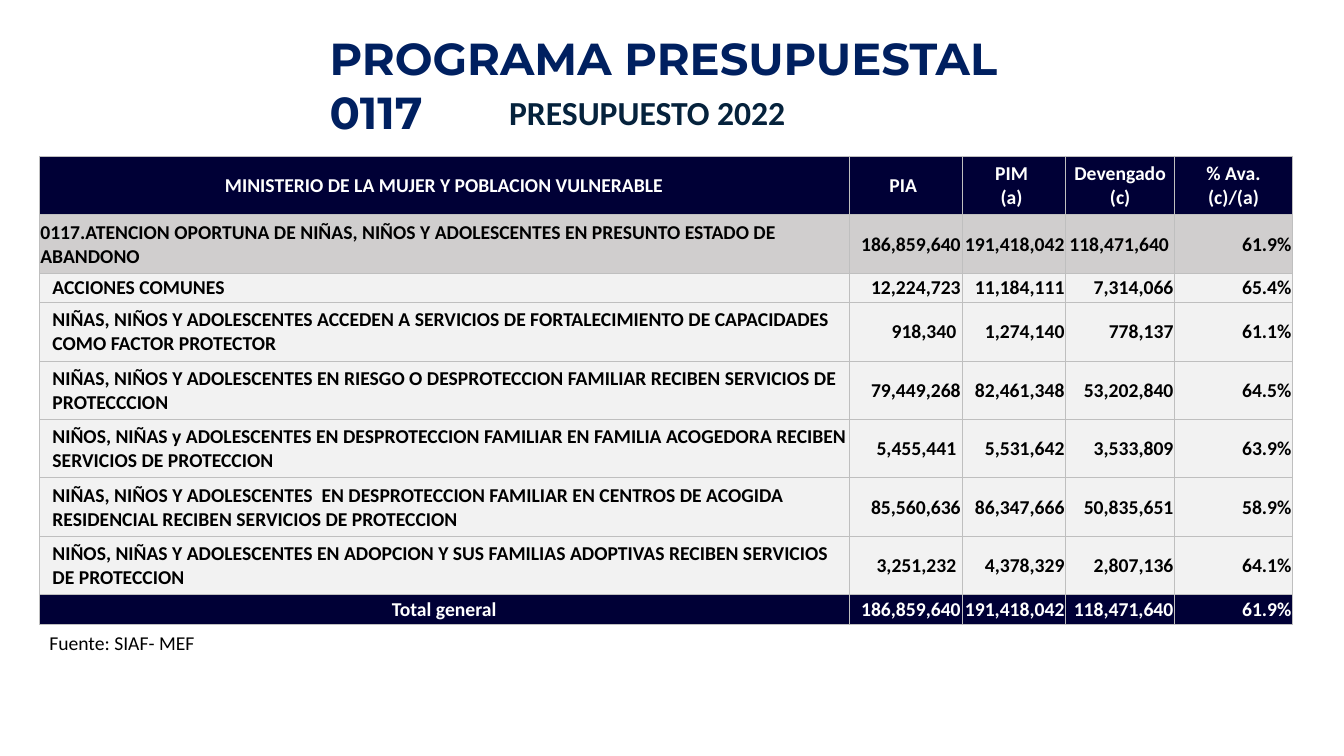
from lxml import etree
from pptx import Presentation
from pptx import util as u
from pptx.dml.color import RGBColor
from pptx.enum import text
from pptx.oxml.ns import qn

NAVY = "000036"
GREY = "D0CECE"
PALE = "F2F2F2"
WHITE = "FFFFFF"
BLACK = "000000"
LEFT, CENTER, RIGHT = text.PP_ALIGN.LEFT, text.PP_ALIGN.CENTER, text.PP_ALIGN.RIGHT

COLUMN_WIDTHS = [8.03, 1.12, 1.03, 1.08, 1.17]
ROW_HEIGHTS = [0.58, 0.58, 0.29] + [0.58] * 5 + [0.29]
BUDGET = [
    ["MINISTERIO DE LA MUJER Y POBLACION VULNERABLE", "PIA ", "PIM \n(a) ", "Devengado\n(c)", "% Ava.\n(c)/(a)"],
    ["0117.ATENCION OPORTUNA DE NIÑAS, NIÑOS Y ADOLESCENTES EN PRESUNTO ESTADO DE ABANDONO",
     "186,859,640", "191,418,042", "118,471,640 ", "61.9%"],
    ["ACCIONES COMUNES", "12,224,723", "11,184,111", "7,314,066", "65.4%"],
    ["NIÑAS, NIÑOS Y ADOLESCENTES ACCEDEN A SERVICIOS DE FORTALECIMIENTO DE CAPACIDADES COMO FACTOR PROTECTOR",
     "918,340 ", "1,274,140", "778,137", "61.1%"],
    ["NIÑAS, NIÑOS Y ADOLESCENTES EN RIESGO O DESPROTECCION FAMILIAR RECIBEN SERVICIOS DE PROTECCCION",
     "79,449,268", "82,461,348", "53,202,840", "64.5%"],
    ["NIÑOS, NIÑAS y ADOLESCENTES EN DESPROTECCION FAMILIAR EN FAMILIA ACOGEDORA RECIBEN SERVICIOS DE PROTECCION",
     "5,455,441 ", "5,531,642", "3,533,809", "63.9%"],
    ["NIÑAS, NIÑOS Y ADOLESCENTES  EN DESPROTECCION FAMILIAR EN CENTROS DE ACOGIDA RESIDENCIAL RECIBEN "
     "SERVICIOS DE PROTECCION", "85,560,636", "86,347,666", "50,835,651", "58.9%"],
    ["NIÑOS, NIÑAS Y ADOLESCENTES EN ADOPCION Y SUS FAMILIAS ADOPTIVAS RECIBEN SERVICIOS DE PROTECCION",
     "3,251,232 ", "4,378,329", "2,807,136", "64.1%"],
    ["Total general", "186,859,640", "191,418,042", "118,471,640", "61.9%"],
]


def color(value):
    return RGBColor.from_string(value)


class BudgetPage:
    font = "Calibri"
    body_size = 14
    border = "BFBFBF"

    def __init__(self, deck):
        self.page = deck.slides.add_slide(deck.slide_layouts[6])

    def add_words(self, para, words, ink, size=body_size, bold=True, font=font, align=LEFT):
        para.alignment = align
        for number, line in enumerate(words.split("\n")):
            if number:
                para.add_line_break()
            span = para.add_run()
            span.text = line
            span.font.name = font
            span.font.size = u.Pt(size)
            span.font.bold = bold
            span.font.color.rgb = color(ink)

    def label(self, area, words, ink, anchor=text.MSO_ANCHOR.TOP, spacing=1.0, **style):
        box = self.page.shapes.add_textbox(*map(u.Inches, area))
        box.text_frame.word_wrap = True
        box.text_frame.vertical_anchor = anchor
        para = box.text_frame.paragraphs[0]
        para.line_spacing = spacing
        self.add_words(para, words, ink, **style)

    def outline(self, cell):
        properties = cell._tc.get_or_add_tcPr()
        for position, side in enumerate(("a:lnL", "a:lnR", "a:lnT", "a:lnB")):
            line = etree.Element(qn(side), w=str(u.Pt(0.5)))
            fill = etree.SubElement(line, qn("a:solidFill"))
            etree.SubElement(fill, qn("a:srgbClr"), val=self.border)
            properties.insert(position, line)

    def fill_cell(self, cell, words, fill, ink, align, indent):
        cell.fill.solid()
        cell.fill.fore_color.rgb = color(fill)
        cell.vertical_anchor = text.MSO_ANCHOR.MIDDLE
        cell.margin_left = u.Inches(indent)
        cell.margin_top = cell.margin_right = u.Inches(0.01)
        cell.margin_bottom = 0
        self.add_words(cell.text_frame.paragraphs[0], words, ink, align=align)
        self.outline(cell)

    def table(self, left, top, rows):
        frame = self.page.shapes.add_table(
            len(rows), len(COLUMN_WIDTHS), u.Inches(left), u.Inches(top),
            u.Inches(sum(COLUMN_WIDTHS)), u.Inches(sum(ROW_HEIGHTS)))
        grid = frame.table
        grid.first_row = grid.horz_banding = False
        for column, width in zip(grid.columns, COLUMN_WIDTHS):
            column.width = u.Inches(width)
        last = len(rows) - 1
        for r, row in enumerate(rows):
            grid.rows[r].height = u.Inches(ROW_HEIGHTS[r])
            dark = r in (0, last)
            fill = NAVY if dark else GREY if r == 1 else PALE
            for c, words in enumerate(row):
                if r == 0 or (r == last and c == 0):
                    align = CENTER
                else:
                    align = RIGHT if c else LEFT
                indent = 0.13 if c == 0 and 1 < r < last else 0.01
                self.fill_cell(grid.cell(r, c), words, fill, WHITE if dark else BLACK, align, indent)


def main():
    deck = Presentation()
    deck.slide_width = u.Inches(13.33)
    deck.slide_height = u.Inches(7.5)
    budget = BudgetPage(deck)
    budget.table(0.39, 1.55, BUDGET)
    budget.label((3.17, 0.26, 6.96, 0.64), "PROGRAMA PRESUPUESTAL 0117", "002060", size=32, font="Montserrat")
    budget.label((4.84, 0.9, 3.16, 0.47), "PRESUPUESTO 2022", "05223C", size=24, align=CENTER,
                 anchor=text.MSO_ANCHOR.MIDDLE, spacing=0.9)
    budget.label((0.39, 6.21, 1.75, 0.34), "Fuente: SIAF- MEF", BLACK, bold=False)
    deck.save("out.pptx")


if __name__ == "__main__":
    main()
